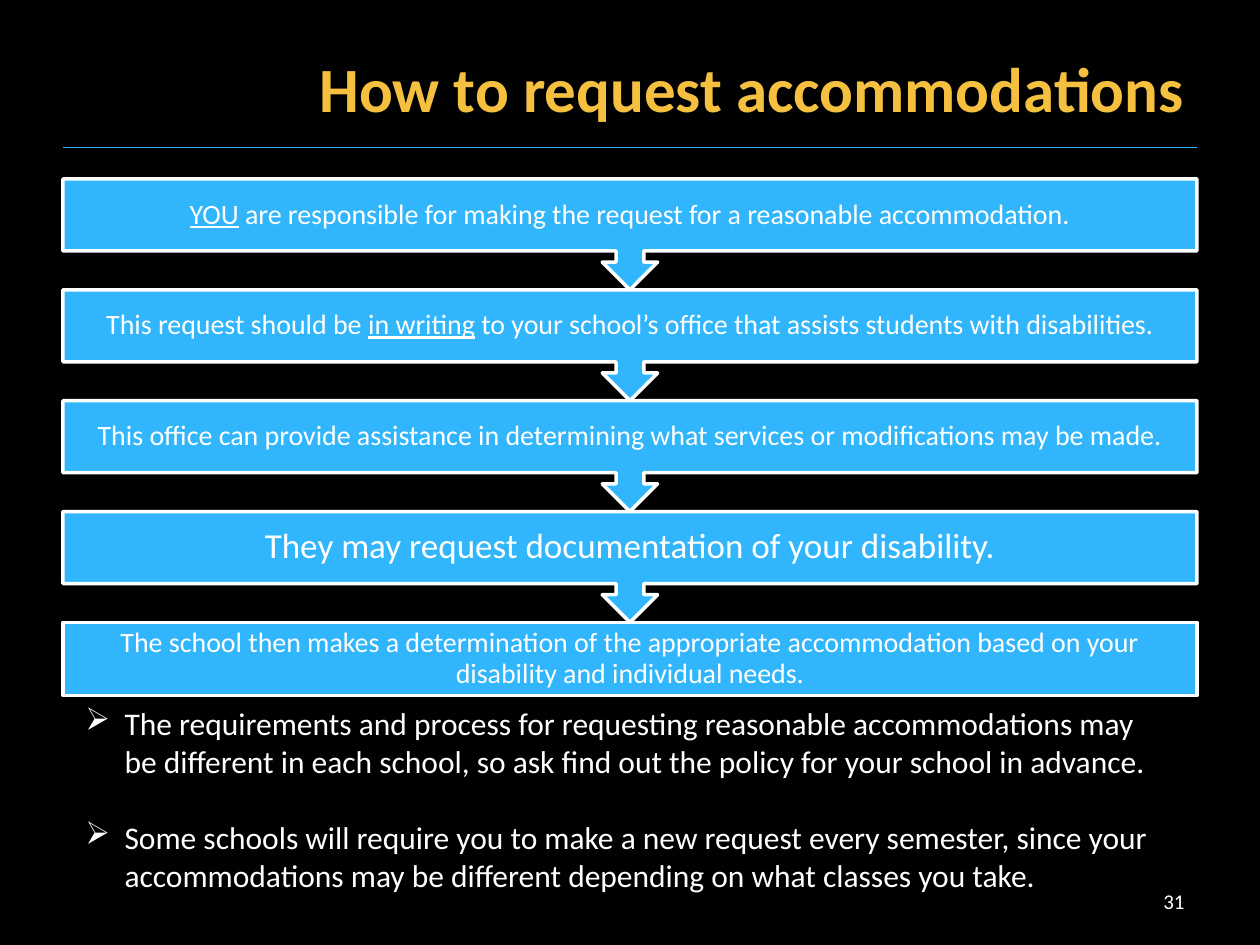
from dataclasses import dataclass

from lxml import etree
from pptx import Presentation
from pptx.dml.color import RGBColor
from pptx.enum import shapes, text
from pptx.oxml import ns
from pptx.util import Inches, Pt


@dataclass(frozen=True)
class Theme:
    font: str = "Calibri"
    background: str = "000000"
    title: str = "F5C040"
    rule: str = "2BB4FC"
    step: str = "31B6FD"
    text: str = "FFFFFF"
    title_size: int = 36
    step_size: int = 16
    large_step_size: int = 20
    bullet_size: int = 18
    number_size: int = 12


THEME = Theme()
LEFT, WIDTH = 0.5, 9
STEP_TOP, STEP_PITCH = 1.42, 0.88
LAST_STEP_HEIGHT = 0.58

# Each step: type size, inset, and runs of (text, underlined)
STEPS = [
    (THEME.step_size, 0.12, [
        ("YOU", True),
        (" are responsible for making the request for a reasonable accommodation.", False)]),
    (THEME.step_size, 0.12, [
        ("This request should be ", False),
        ("in writing", True),
        (" to your school’s office that assists students with disabilities.", False)]),
    (THEME.step_size, 0.12, [
        ("This office can provide assistance in determining what services or "
         "modifications may be made.", False)]),
    (THEME.large_step_size, 0.16, [
        ("They may request documentation of your disability.", False)]),
    (THEME.step_size, 0.12, [
        ("The school then makes a determination of the appropriate accommodation "
         "based on your disability and individual needs.", False)]),
]
BULLETS = [
    "The requirements and process for requesting reasonable accommodations may be "
    "different in each school, so ask find out the policy for your school in advance.",
    "Some schools will require you to make a new request every semester, since your "
    "accommodations may be different depending on what classes you take.",
]


def rgb(value):
    return RGBColor.from_string(value)


def add_run(p, content, size, color=THEME.text, bold=False, underline=False):
    r = p.add_run()
    r.text = content
    r.font.name = THEME.font
    r.font.size = Pt(size)
    r.font.color.rgb = rgb(color)
    r.font.bold = bold
    r.font.underline = underline


def add_title(s, content):
    sp = s.shapes.title
    sp.left, sp.top = Inches(LEFT), Inches(0.3)
    sp.width, sp.height = Inches(WIDTH), Inches(0.78)
    tf = sp.text_frame
    tf.vertical_anchor = text.MSO_ANCHOR.MIDDLE
    p = tf.paragraphs[0]
    p.alignment = text.PP_ALIGN.RIGHT
    add_run(p, content, THEME.title_size, THEME.title, bold=True)


def add_rule(s, y):
    line = s.shapes.add_connector(
        shapes.MSO_CONNECTOR.STRAIGHT,
        Inches(LEFT), Inches(y), Inches(LEFT + WIDTH), Inches(y))
    line.line.color.rgb = rgb(THEME.rule)
    line.line.width = Pt(0.75)
    etree.SubElement(line._element.spPr, ns.qn("a:effectLst"))


def add_step(s, kind, top, height, size, inset, runs):
    sp = s.shapes.add_shape(
        kind, Inches(LEFT), Inches(top), Inches(WIDTH), Inches(height))
    sp.shadow.inherit = False
    sp.fill.solid()
    sp.fill.fore_color.rgb = rgb(THEME.step)
    sp.line.color.rgb = rgb(THEME.text)
    sp.line.width = Pt(2)
    tf = sp.text_frame
    tf.word_wrap = True
    tf.vertical_anchor = text.MSO_ANCHOR.MIDDLE
    tf.margin_left = tf.margin_right = Inches(inset)
    tf.margin_top = tf.margin_bottom = Inches(inset)
    p = tf.paragraphs[0]
    p.alignment = text.PP_ALIGN.CENTER
    p.line_spacing = 0.9
    for content, underline in runs:
        add_run(p, content, size, underline=underline)


def add_steps(s):
    """Stack the steps from the last up, so each arrow tip lies over the next box."""
    last = len(STEPS) - 1
    for i in range(last, -1, -1):
        if i == last:
            kind, height = shapes.MSO_SHAPE.RECTANGLE, LAST_STEP_HEIGHT
        else:
            kind, height = shapes.MSO_SHAPE.DOWN_ARROW_CALLOUT, STEP_PITCH
        add_step(s, kind, STEP_TOP + i * STEP_PITCH, height, *STEPS[i])


def add_text_box(s, left, top, width, height):
    tf = s.shapes.add_textbox(
        Inches(left), Inches(top), Inches(width), Inches(height)).text_frame
    tf.word_wrap = True
    return tf


def set_bullet(p, char, indent):
    pPr = p._p.get_or_add_pPr()
    pPr.set("marL", str(Inches(indent)))
    pPr.set("indent", str(-Inches(indent)))
    etree.SubElement(pPr, ns.qn("a:buChar")).set("char", char)


def add_bullets(s):
    tf = add_text_box(s, 0.58, 5.54, 8.75, 1.62)
    for i, content in enumerate(BULLETS):
        p = tf.add_paragraph() if i else tf.paragraphs[0]
        if i:
            p.space_before = Pt(22)
        set_bullet(p, "➢", 0.31)
        add_run(p, content, THEME.bullet_size)


def add_slide_number(s, number):
    tf = add_text_box(s, 7.17, 6.95, 2.33, 0.4)
    tf.vertical_anchor = text.MSO_ANCHOR.MIDDLE
    p = tf.paragraphs[0]
    p.alignment = text.PP_ALIGN.RIGHT
    add_run(p, number, THEME.number_size)


def main():
    prs = Presentation()
    prs.slide_width, prs.slide_height = Inches(10), Inches(7.5)
    s = prs.slides.add_slide(prs.slide_layouts.get_by_name("Title Only"))
    s.background.fill.solid()
    s.background.fill.fore_color.rgb = rgb(THEME.background)
    add_title(s, "How to request accommodations")
    add_rule(s, 1.17)
    add_slide_number(s, "31")
    add_steps(s)
    add_bullets(s)
    prs.save("out.pptx")


if __name__ == "__main__":
    main()
